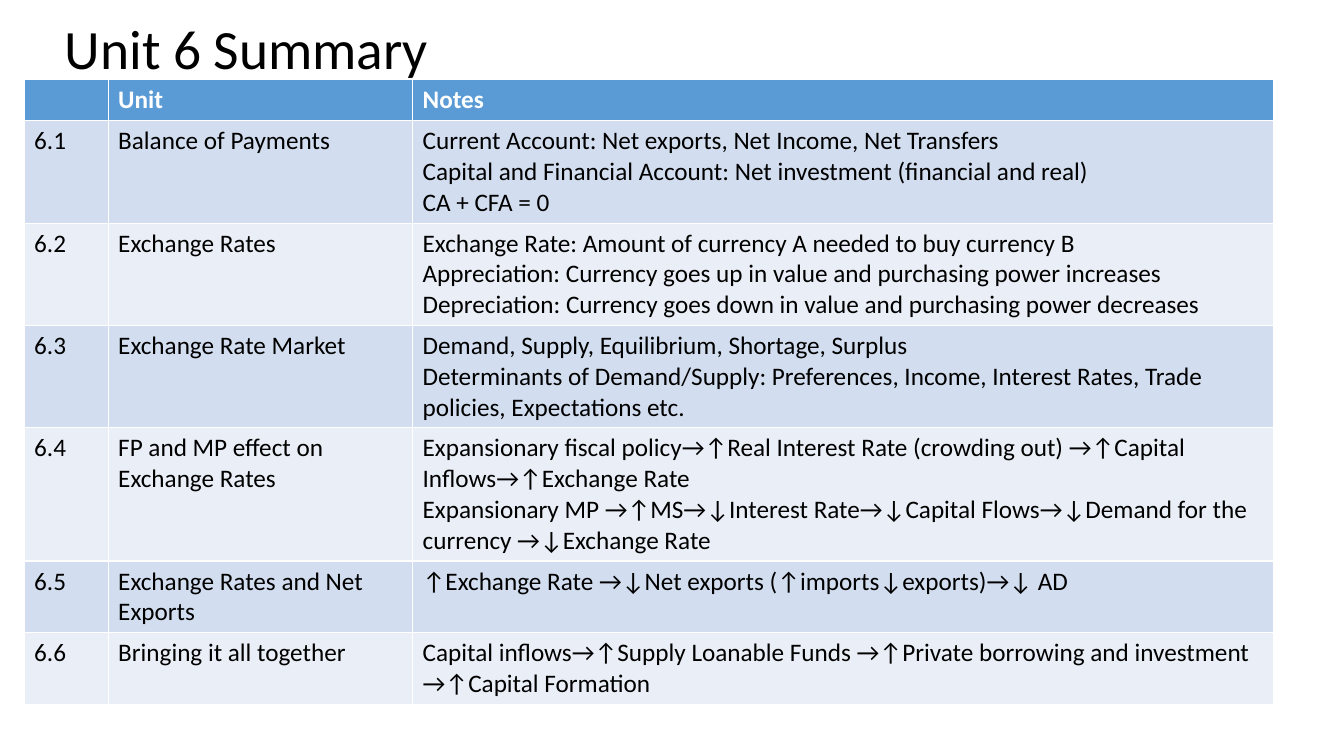
from dataclasses import dataclass

from pptx import Presentation
from pptx import util as u
from pptx.dml.color import RGBColor
from pptx.enum import text


@dataclass(frozen=True)
class Theme:
    font: str = "Calibri"
    title_size: float = 39.6
    table_size: float = 18
    ink: str = "000000"
    header_ink: str = "FFFFFF"
    header_fill: str = "5B9BD5"
    bands: tuple = ("D2DEEF", "EAEFF7")


THEME = Theme()
SLIDE_SIZE = (1280, 720)
TITLE_BOX = (52, 21, 508, 57)
SUMMARY_BOX = (23, 76, 1190, 273)
COLUMN_WIDTHS = (80, 290, 820)

HEADINGS = ("", "Unit", "Notes")
UNITS = [
    ("6.1", "Balance of Payments",
     "Current Account: Net exports, Net Income, Net Transfers\n"
     "Capital and Financial Account: Net investment (financial and real)\n"
     "CA + CFA = 0"),
    ("6.2", "Exchange Rates",
     "Exchange Rate: Amount of currency A needed to buy currency B\n"
     "Appreciation: Currency goes up in value and purchasing power increases\n"
     "Depreciation: Currency goes down in value and purchasing power decreases"),
    ("6.3", "Exchange Rate Market",
     "Demand, Supply, Equilibrium, Shortage, Surplus\n"
     "Determinants of Demand/Supply: Preferences, Income, Interest Rates, "
     "Trade policies, Expectations etc."),
    ("6.4", "FP and MP effect on Exchange Rates",
     "Expansionary fiscal policy→↑Real Interest Rate (crowding out) "
     "→↑Capital Inflows→↑Exchange Rate\n"
     "Expansionary MP →↑MS→↓Interest Rate→↓Capital Flows"
     "→↓Demand for the currency →↓Exchange Rate"),
    ("6.5", "Exchange Rates and Net Exports",
     "↑Exchange Rate →↓Net exports (↑imports↓exports)→↓ AD"),
    ("6.6", "Bringing it all together",
     "Capital inflows→↑Supply Loanable Funds →↑Private borrowing and "
     "investment →↑Capital Formation"),
]


def px(length):
    return u.Emu(length * 9525)


def style_font(paragraph, size, color, bold=False):
    font = paragraph.font
    font.name, font.size, font.bold = THEME.font, u.Pt(size), bold
    font.color.rgb = RGBColor.from_string(color)


def place_title(slide, box, wording):
    title = slide.shapes.title
    title.left, title.top, title.width, title.height = map(px, box)
    frame = title.text_frame
    frame.text = wording
    frame.auto_size = text.MSO_AUTO_SIZE.NONE
    frame.vertical_anchor = text.MSO_ANCHOR.MIDDLE
    heading = frame.paragraphs[0]
    heading.alignment = text.PP_ALIGN.LEFT
    heading.line_spacing = 0.9
    style_font(heading, THEME.title_size, THEME.ink)


def fill_cell(cell, wording, fill, ink, bold):
    cell.fill.solid()
    cell.fill.fore_color.rgb = RGBColor.from_string(fill)
    cell.text_frame.text = wording
    for paragraph in cell.text_frame.paragraphs:
        style_font(paragraph, THEME.table_size, ink, bold)


def place_summary(slide, box, headings, units):
    """Rows start equally high and grow with their notes."""
    entries = [headings, *units]
    summary = slide.shapes.add_table(
        len(entries), len(headings), *map(px, box)).table
    for column, width in zip(summary.columns, COLUMN_WIDTHS):
        column.width = px(width)
    for row, entry in enumerate(entries):
        is_header = row == 0
        fill = THEME.header_fill if is_header else THEME.bands[(row - 1) % 2]
        ink = THEME.header_ink if is_header else THEME.ink
        for column, wording in enumerate(entry):
            fill_cell(summary.cell(row, column), wording, fill, ink, is_header)


def main():
    deck = Presentation()
    deck.slide_width, deck.slide_height = map(px, SLIDE_SIZE)
    slide = deck.slides.add_slide(deck.slide_layouts.get_by_name("Title Only"))
    place_title(slide, TITLE_BOX, "Unit 6 Summary")
    place_summary(slide, SUMMARY_BOX, HEADINGS, UNITS)
    deck.save("out.pptx")


if __name__ == "__main__":
    main()
